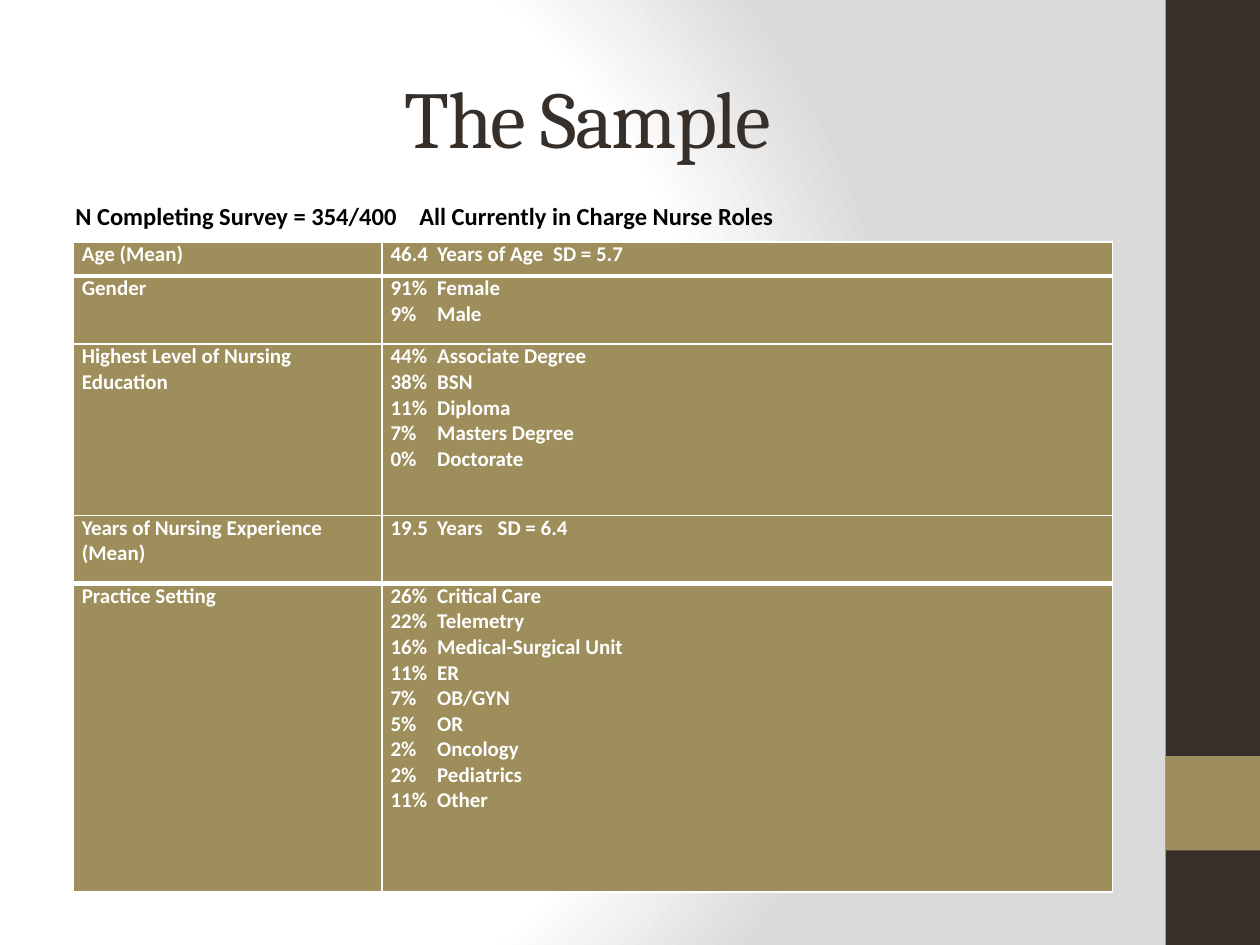
from dataclasses import dataclass

import lxml.etree
import pptx
import pptx.dml.color
import pptx.enum.shapes
import pptx.enum.text
import pptx.oxml.ns
import pptx.util

COLORS = {
    "dark": "37302A",
    "gold": "9E8E5C",
    "white": "FFFFFF",
    "gray": "DADADA",
    "black": "000000",
}
COLUMNS, ROWS = 40, 30
WIDTH, HEIGHT = pptx.util.Inches(10), pptx.util.Inches(7.5)
COLUMN_WIDTHS = (9.8, 23.2)
HEAVY_EDGES = (1, 4)
SHARE_TAB = 0.37


@dataclass(frozen=True)
class Area:
    column: float
    row: float
    columns: float
    rows: float

    def bounds(self) -> tuple:
        return across(self.column), down(self.row), across(self.columns), down(self.rows)


@dataclass(frozen=True)
class Band:
    area: Area
    color: str


@dataclass(frozen=True)
class Fact:
    label: str
    lines: tuple
    rows: float
    tabs: tuple = (SHARE_TAB,)


BANDS = (
    Band(Area(37, 0, 3, 30), "dark"),
    Band(Area(37, 24, 3, 3), "gold"),
)
FACTS = (
    Fact("Age (Mean)", ("46.4\tYears of Age\tSD = 5.7",), 1.08, (SHARE_TAB, 1.29)),
    Fact("Gender", ("91%\tFemale", "9%\tMale"), 2.16),
    Fact(
        "Highest Level of Nursing Education",
        ("44%\tAssociate Degree", "38%\tBSN", "11%\tDiploma",
         "7%\tMasters Degree", "0%\tDoctorate"),
        5.44,
    ),
    Fact("Years of Nursing Experience (Mean)", ("19.5\tYears\tSD = 6.4",), 2.16,
         (SHARE_TAB, 0.85)),
    Fact(
        "Practice Setting",
        ("26%\tCritical Care", "22%\tTelemetry", "16%\tMedical-Surgical Unit",
         "11%\tER", "7%\tOB/GYN", "5%\tOR", "2%\tOncology",
         "2%\tPediatrics", "11%\tOther"),
        9.8,
    ),
)


def across(columns: float) -> int:
    return round(WIDTH * columns / COLUMNS)


def down(rows: float) -> int:
    return round(HEIGHT * rows / ROWS)


def rgb(name: str):
    return pptx.dml.color.RGBColor.from_string(COLORS[name])


def add_xml(parent, tag: str, **attributes):
    return lxml.etree.SubElement(
        parent, pptx.oxml.ns.qn(tag), {key: str(value) for key, value in attributes.items()}
    )


def add_span(para, text: str, font: str, size: float, color: str, bold: bool = False):
    span = para.add_run()
    span.text = text
    span.font.name = font
    span.font.size = pptx.util.Pt(size)
    span.font.bold = bold
    span.font.color.rgb = rgb(color)
    return span


def set_tabs(para, stops: tuple) -> None:
    tabs = add_xml(para._p.get_or_add_pPr(), "a:tabLst")
    for stop in stops:
        add_xml(tabs, "a:tab", pos=pptx.util.Inches(stop), algn="l")


def paint_background(page) -> None:
    page.background.fill.solid()
    properties = page.element.xpath(".//p:bgPr")[0]
    properties.remove(properties[0])
    gradient = add_xml(properties, "a:gradFill", rotWithShape=1)
    properties.insert(0, gradient)
    stops = add_xml(gradient, "a:gsLst")
    for position, color in ((0, "white"), (75, "white"), (100, "gray")):
        stop = add_xml(stops, "a:gs", pos=position * 1000)
        add_xml(stop, "a:srgbClr", val=COLORS[color])
    shade = add_xml(gradient, "a:path", path="circle")
    add_xml(shade, "a:fillToRect", l=20000, t=50000, r=100000, b=50000)


def draw_band(page, band: Band) -> None:
    box = page.shapes.add_shape(
        pptx.enum.shapes.MSO_SHAPE.RECTANGLE, *band.area.bounds()
    )
    box.shadow.inherit = False
    box.fill.solid()
    box.fill.fore_color.rgb = rgb(band.color)
    box.line.fill.background()


def write_title(page) -> None:
    title = page.shapes.title
    title.left, title.top, title.width, title.height = Area(2, 1.2, 33.32, 5).bounds()
    title.text_frame.vertical_anchor = pptx.enum.text.MSO_ANCHOR.MIDDLE
    para = title.text_frame.paragraphs[0]
    para.alignment = pptx.enum.text.PP_ALIGN.CENTER
    span = add_span(para, "The Sample", "Cambria", 46, "dark")
    span.font._element.set("spc", "-100")


def write_survey_line(page) -> None:
    box = page.shapes.add_textbox(*Area(2, 6.08, 33.32, 1.52).bounds())
    box.text_frame.word_wrap = True
    box.text_frame.vertical_anchor = pptx.enum.text.MSO_ANCHOR.MIDDLE
    para = box.text_frame.paragraphs[0]
    set_tabs(para, (2.73,))
    add_span(
        para,
        "N Completing Survey = 354/400\tAll Currently in Charge Nurse Roles",
        "Calibri", 14, "black", True,
    )


def style_cell(cell, row: int) -> None:
    cell.margin_left = cell.margin_right = pptx.util.Inches(0.07)
    cell.margin_top = cell.margin_bottom = 0
    properties = cell._tc.get_or_add_tcPr()
    widths = {
        "a:lnL": 1,
        "a:lnR": 1,
        "a:lnT": 3 if row in HEAVY_EDGES else 1,
        "a:lnB": 3 if row + 1 in HEAVY_EDGES else 1,
    }
    for tag, width in widths.items():
        edge = add_xml(properties, tag, w=pptx.util.Pt(width))
        add_xml(add_xml(edge, "a:solidFill"), "a:srgbClr", val=COLORS["white"])
    cell.fill.solid()
    cell.fill.fore_color.rgb = rgb("gold")


def write_cell(cell, lines: tuple, tabs: tuple = ()) -> None:
    frame = cell.text_frame
    for index, line in enumerate(lines):
        para = frame.add_paragraph() if index else frame.paragraphs[0]
        if tabs:
            set_tabs(para, tabs)
        add_span(para, line, "Calibri", 12, "white", True)


def draw_table(page) -> None:
    area = Area(2.32, 7.68, sum(COLUMN_WIDTHS), sum(fact.rows for fact in FACTS))
    table = page.shapes.add_table(
        len(FACTS), len(COLUMN_WIDTHS), *area.bounds()
    ).table
    for column, width in zip(table.columns, COLUMN_WIDTHS):
        column.width = across(width)
    for row, fact in enumerate(FACTS):
        table.rows[row].height = down(fact.rows)
        for cell in table.rows[row].cells:
            style_cell(cell, row)
        write_cell(table.cell(row, 0), (fact.label,))
        write_cell(table.cell(row, 1), fact.lines, fact.tabs)


def main() -> None:
    deck = pptx.Presentation()
    deck.slide_width, deck.slide_height = WIDTH, HEIGHT
    page = deck.slides.add_slide(deck.slide_layouts[5])
    paint_background(page)
    for band in BANDS:
        draw_band(page, band)
    write_title(page)
    draw_table(page)
    write_survey_line(page)
    deck.save("out.pptx")


if __name__ == "__main__":
    main()
